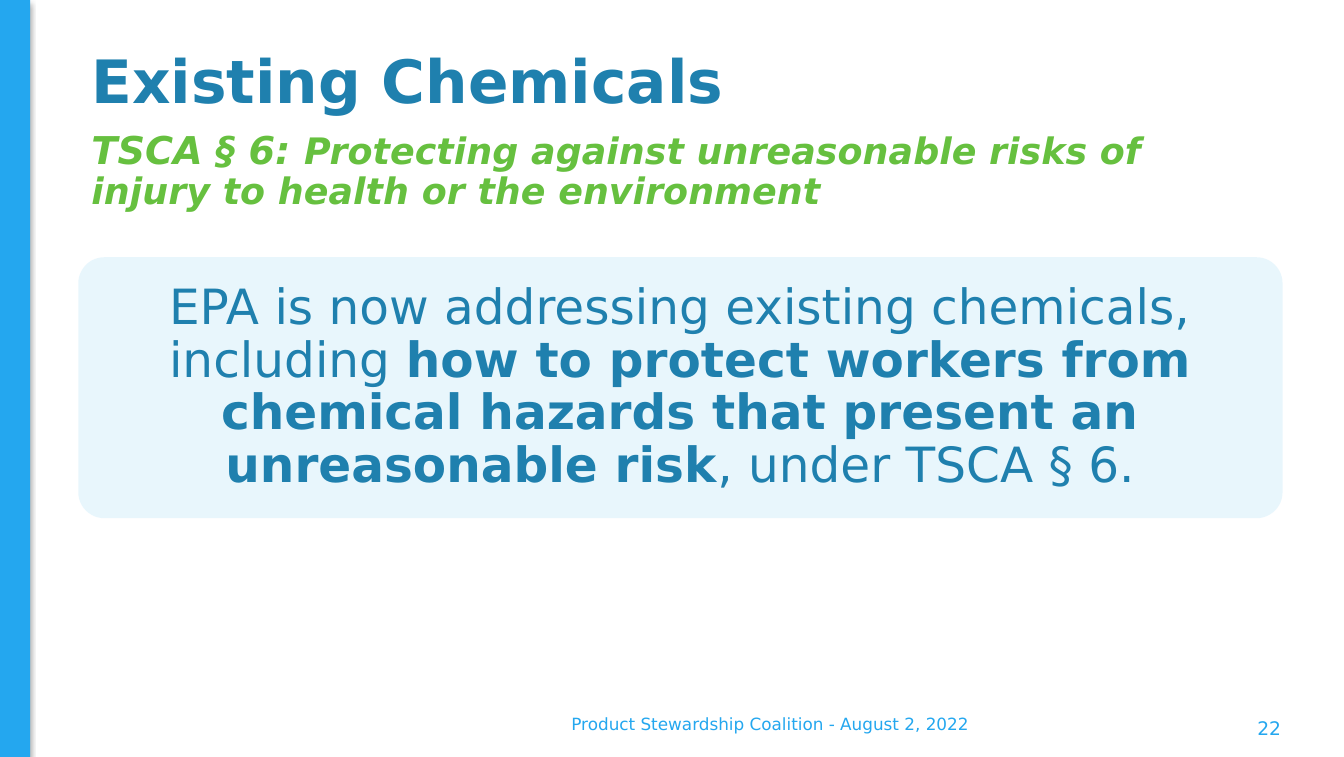
from lxml import etree
from pptx import Presentation
from pptx.dml.color import RGBColor
from pptx.enum.shapes import MSO_SHAPE
from pptx.enum.text import MSO_ANCHOR, PP_ALIGN
from pptx.oxml.ns import qn
from pptx.util import Cm, Pt

RECT, ROUNDED = MSO_SHAPE.RECTANGLE, MSO_SHAPE.ROUNDED_RECTANGLE
MIDDLE = MSO_ANCHOR.MIDDLE
LEFT, CENTER, RIGHT = PP_ALIGN.LEFT, PP_ALIGN.CENTER, PP_ALIGN.RIGHT

SKY = RGBColor(0x24, 0xA7, 0xEF)
BLUE = RGBColor(0x1F, 0x80, 0xAE)
GREEN = RGBColor(0x66, 0xC0, 0x3F)
PALE = RGBColor(0xD2, 0xEE, 0xFB)
FONT = "DejaVu Sans"

SLIDE_W, SLIDE_H = 25.4, 14.3
MARGIN, CONTENT_W = 1.48, 22.76


def add_panel(shapes, kind, box, color):
    """Add a filled shape without outline or shadow."""
    sp = shapes.add_shape(kind, *map(Cm, box))
    sp.shadow.inherit = False
    sp.fill.solid()
    sp.fill.fore_color.rgb = color
    sp.line.fill.background()
    return sp


def set_alpha(color_element, percent):
    """Set the opacity of a colour element."""
    etree.SubElement(color_element, qn("a:alpha"), val=str(percent * 1000))


def add_shadow(sp):
    """Give a shape a soft dark outer shadow."""
    effects = sp._element.spPr.find(qn("a:effectLst"))
    shadow = etree.SubElement(effects, qn("a:outerShdw"), blurRad=str(Pt(3.1)),
                              dist=str(Pt(1.8)), dir="5400000", rotWithShape="0")
    set_alpha(etree.SubElement(shadow, qn("a:srgbClr"), val="000000"), 35)


def add_text(shapes, box, runs, color, align=LEFT, spacing=1.0, inset=None):
    """Add a wrapped text box from (text, font values) runs."""
    tf = shapes.add_textbox(*map(Cm, box)).text_frame
    tf.word_wrap = True
    tf.vertical_anchor = MIDDLE
    if inset is not None:
        for side in ("left", "top", "right", "bottom"):
            setattr(tf, f"margin_{side}", Cm(inset))
    p = tf.paragraphs[0]
    p.alignment = align
    p.line_spacing = spacing
    for text, values in runs:
        r = p.add_run()
        r.text = text
        r.font.color.rgb = color
        for name, value in {"name": FONT, **values}.items():
            setattr(r.font, name, value)


def add_callout(s):
    """Add the rounded panel and its statement as one group."""
    shapes = s.shapes.add_group_shape().shapes
    sp = add_panel(shapes, ROUNDED, (MARGIN, 4.86, CONTENT_W, 4.93), PALE)
    sp.adjustments[0] = 0.1
    set_alpha(sp._element.spPr.find(f"{qn('a:solidFill')}/{qn('a:srgbClr')}"), 50)
    plain = {"size": Pt(26)}
    add_text(shapes, (1.62, 5, 22.48, 4.65), [
        ("EPA is now addressing existing chemicals, including ", plain),
        ("how to protect workers from chemical hazards that present an "
         "unreasonable risk", {**plain, "bold": True}),
        (", under TSCA § 6.", plain),
    ], BLUE, CENTER, 0.9, 0.28)


def main():
    """Build the slide and save it."""
    prs = Presentation()
    prs.slide_width, prs.slide_height = Cm(SLIDE_W), Cm(SLIDE_H)
    s = prs.slides.add_slide(prs.slide_layouts[6])

    add_shadow(add_panel(s.shapes, RECT, (0, 0, 0.57, SLIDE_H), SKY))
    add_text(s.shapes, (MARGIN, 0.51, CONTENT_W, 2.16),
             [("Existing Chemicals", {"size": Pt(32), "bold": True})],
             BLUE, spacing=0.9)
    add_callout(s)
    add_text(s.shapes, (5.89, 13.29, 17.32, 0.76),
             [("Product Stewardship Coalition - August 2, 2022", {"size": Pt(9)})],
             SKY, CENTER)
    add_text(s.shapes, (21.89, 13.49, 2.57, 0.51),
             [("22", {"size": Pt(10)})], SKY, RIGHT)
    emphasis = {"bold": True, "italic": True}
    add_text(s.shapes, (MARGIN, 2.31, CONTENT_W, 1.88), [
        ("TSCA § 6: ", {"size": Pt(20.5), **emphasis}),
        ("Protecting against unreasonable risks of injury to health or the "
         "environment", {"size": Pt(19.5), **emphasis}),
    ], GREEN, spacing=0.9)

    prs.save("out.pptx")


if __name__ == "__main__":
    main()
